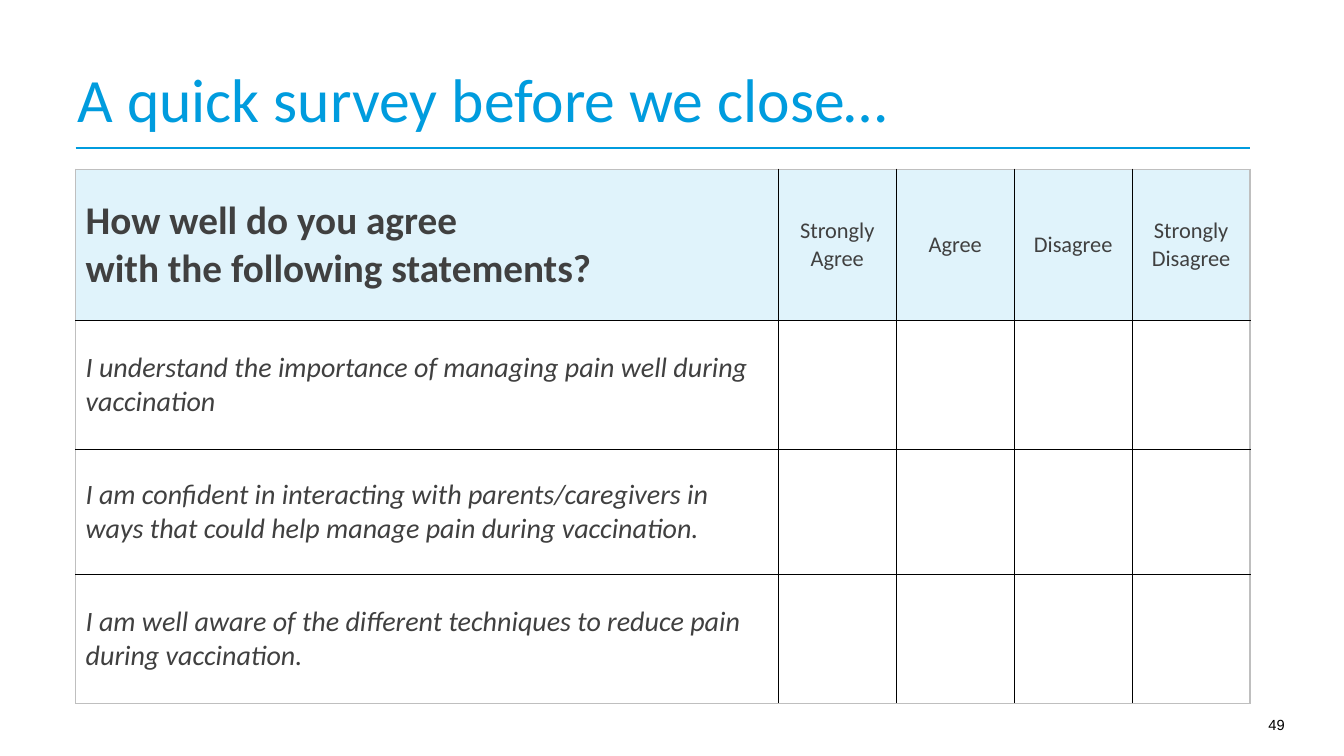
"""Builds a closing survey slide with a table of statements and agreement levels."""
from dataclasses import dataclass

from lxml import etree
from pptx import Presentation
from pptx.dml.color import RGBColor
from pptx.enum import shapes, text
from pptx.oxml import ns
from pptx.util import Inches, Pt


@dataclass(frozen=True)
class Theme:
    accent: str = "009CDE"
    ink: str = "404040"
    black: str = "000000"
    header: str = "E0F3FB"
    frame: str = "BFBFBF"
    font: str = "Calibri"
    number_font: str = "Arial"
    title: float = 44
    question: float = 28
    statement: float = 20
    level: float = 16
    number: float = 10.5


theme = Theme()


def add_text(paragraph, words, size, color, font=theme.font, bold=False, italic=False):
    run = paragraph.add_run()
    run.text = words
    run.font.size = Pt(size)
    run.font.name = font
    run.font.bold = bold
    run.font.italic = italic
    run.font.color.rgb = RGBColor.from_string(color)


def add_border(cell, side, color):
    line = etree.SubElement(cell._tc.get_or_add_tcPr(), ns.qn(f"a:ln{side}"), w=str(Pt(1)))
    fill = etree.SubElement(line, ns.qn("a:solidFill"))
    etree.SubElement(fill, ns.qn("a:srgbClr"), val=color)


question = ["How well do you agree", "with the following statements?"]
levels = ["Strongly Agree", "Agree", "Disagree", "Strongly Disagree"]
statements = [
    "I understand the importance of managing pain well during vaccination",
    "I am confident in interacting with parents/caregivers in ways that could help "
    "manage pain during vaccination.",
    "I am well aware of the different techniques to reduce pain during vaccination.",
]
column_widths = [6.97] + [1.17] * len(levels)
row_heights = [1.5, 1.28, 1.24, 1.28]

deck = Presentation()
deck.slide_width, deck.slide_height = Inches(13.33), Inches(7.5)
slide = deck.slides.add_slide(deck.slide_layouts[5])

title = slide.shapes.title
title.left, title.top = Inches(0.75), Inches(0.75)
title.width, title.height = Inches(11.23), Inches(0.6)
heading = title.text_frame
heading.auto_size = text.MSO_AUTO_SIZE.NONE
heading.vertical_anchor = text.MSO_ANCHOR.BOTTOM
heading.margin_left, heading.margin_right = Inches(0.02), Inches(0.39)
heading.margin_top = heading.margin_bottom = 0
heading.paragraphs[0].alignment = text.PP_ALIGN.LEFT
heading.paragraphs[0].line_spacing = 0.9
add_text(heading.paragraphs[0], "A quick survey before we close…", theme.title, theme.accent)

rule = slide.shapes.add_connector(
    shapes.MSO_CONNECTOR.STRAIGHT, Inches(0.75), Inches(1.47), Inches(12.4), Inches(1.47))
rule.line.color.rgb = RGBColor.from_string(theme.accent)
rule.line.width = Pt(1.5)
etree.SubElement(rule._element.spPr, ns.qn("a:effectLst"))

survey = slide.shapes.add_table(
    len(row_heights), len(column_widths), Inches(0.75), Inches(1.68),
    Inches(sum(column_widths)), Inches(sum(row_heights))).table
for column, width in zip(survey.columns, column_widths):
    column.width = Inches(width)
for row, height in zip(survey.rows, row_heights):
    row.height = Inches(height)

last_row, last_column = len(row_heights) - 1, len(column_widths) - 1
for r in range(last_row + 1):
    for c in range(last_column + 1):
        cell = survey.cell(r, c)
        cell.vertical_anchor = text.MSO_ANCHOR.MIDDLE
        outer_sides = {"L": c == 0, "R": c == last_column, "T": r == 0, "B": r == last_row}
        for side, is_outer in outer_sides.items():
            add_border(cell, side, theme.frame if is_outer else theme.black)
        if r == 0:
            cell.fill.solid()
            cell.fill.fore_color.rgb = RGBColor.from_string(theme.header)
        else:
            cell.fill.background()

question_frame = survey.cell(0, 0).text_frame
add_text(question_frame.paragraphs[0], question[0], theme.question, theme.ink, bold=True)
add_text(question_frame.add_paragraph(), question[1], theme.question, theme.ink, bold=True)
for c, level in enumerate(levels, 1):
    label = survey.cell(0, c).text_frame.paragraphs[0]
    label.alignment = text.PP_ALIGN.CENTER
    add_text(label, level, theme.level, theme.ink)
for r, statement in enumerate(statements, 1):
    add_text(survey.cell(r, 0).text_frame.paragraphs[0], statement,
             theme.statement, theme.ink, italic=True)

page_number = slide.shapes.add_textbox(
    Inches(11.95), Inches(7.05), Inches(0.89), Inches(0.29)).text_frame
page_number.word_wrap = True
page_number.paragraphs[0].alignment = text.PP_ALIGN.RIGHT
add_text(page_number.paragraphs[0], "49", theme.number, theme.black, font=theme.number_font)

deck.save("out.pptx")
